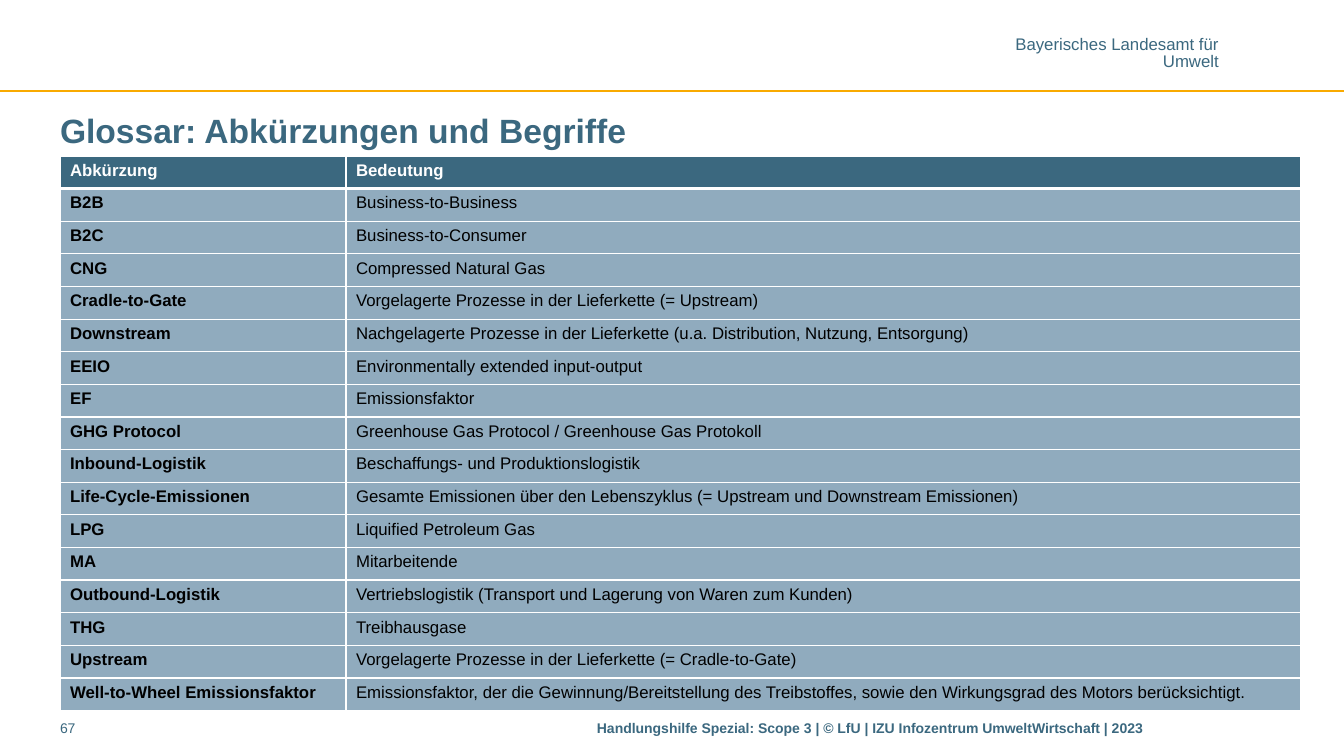
"""Build the glossary slide with its table of abbreviations."""
from lxml.etree import SubElement
from pptx import Presentation
from pptx.dml.color import RGBColor
from pptx.enum.shapes import MSO_CONNECTOR
from pptx.enum.text import MSO_ANCHOR, MSO_AUTO_SIZE, PP_ALIGN
from pptx.oxml.ns import qn
from pptx.util import Emu, Pt

TITLE = "Glossar: Abkürzungen und Begriffe"
AGENCY = ["Bayerisches Landesamt für", "Umwelt"]
FOOTER = "Handlungshilfe Spezial: Scope 3 | © LfU | IZU\u00a0Infozentrum UmweltWirtschaft | 2023"
PAGE = "67"
GLOSSARY = [
    ("Abkürzung", "Bedeutung"),
    ("B2B", "Business-to-Business"),
    ("B2C", "Business-to-Consumer"),
    ("CNG", "Compressed Natural Gas"),
    ("Cradle-to-Gate", "Vorgelagerte Prozesse in der Lieferkette (= Upstream)"),
    ("Downstream", "Nachgelagerte Prozesse in der Lieferkette (u.a. Distribution, Nutzung, Entsorgung)"),
    ("EEIO", "Environmentally extended input-output"),
    ("EF", "Emissionsfaktor"),
    ("GHG Protocol", "Greenhouse Gas Protocol / Greenhouse Gas Protokoll"),
    ("Inbound-Logistik", "Beschaffungs- und Produktionslogistik"),
    ("Life-Cycle-Emissionen", "Gesamte Emissionen über den Lebenszyklus (= Upstream und Downstream Emissionen)"),
    ("LPG", "Liquified Petroleum Gas"),
    ("MA", "Mitarbeitende"),
    ("Outbound-Logistik", "Vertriebslogistik (Transport und Lagerung von Waren zum Kunden)"),
    ("THG", "Treibhausgase"),
    ("Upstream", "Vorgelagerte Prozesse in der Lieferkette (= Cradle-to-Gate)"),
    ("Well-to-Wheel Emissionsfaktor", "Emissionsfaktor, der die Gewinnung/Bereitstellung des Treibstoffes, "
     "sowie den Wirkungsgrad des Motors berücksichtigt."),
]

PETROL = RGBColor(0x3B, 0x68, 0x7F)
MIST = RGBColor(0x90, 0xAB, 0xBE)
AMBER = RGBColor(0xF9, 0xAA, 0x00)
WHITE = RGBColor(0xFF, 0xFF, 0xFF)
BLACK = RGBColor(0x00, 0x00, 0x00)
FONT = "Arial"

WIDTH, HEIGHT = 1344, 756
LEFT, CONTENT_WIDTH = 60, 1241
RULE_Y = 91
TABLE_TOP, TABLE_HEIGHT = 156, 555
TERM_WIDTH = 286
FOOTER_TOP, FOOTER_HEIGHT = 714, 31
INSET = 5


def px(length):
    return Emu(round(length * 12192000 / WIDTH))


def add_run(paragraph, text, size, color, bold=False):
    run = paragraph.add_run()
    run.text = text
    run.font.name, run.font.size, run.font.bold = FONT, Pt(size), bold
    run.font.color.rgb = color


def set_insets(frame, vertical):
    frame.margin_left = frame.margin_right = 0
    frame.margin_top = frame.margin_bottom = px(vertical)


def add_label(slide, left, width, text, bold=False):
    frame = slide.shapes.add_textbox(px(left), px(FOOTER_TOP), px(width), px(FOOTER_HEIGHT)).text_frame
    frame.word_wrap = True
    set_insets(frame, INSET)
    add_run(frame.paragraphs[0], text, 10, PETROL, bold)


def add_header(slide):
    rule = slide.shapes.add_connector(MSO_CONNECTOR.STRAIGHT, 0, px(RULE_Y), px(WIDTH), px(RULE_Y))
    rule.line.color.rgb, rule.line.width = AMBER, Pt(2)
    SubElement(rule._element.spPr, qn("a:effectLst"))

    frame = slide.shapes.add_textbox(px(1015), px(37), px(204), px(34)).text_frame
    frame.word_wrap = False
    set_insets(frame, 0)
    for index, line in enumerate(AGENCY):
        paragraph = frame.add_paragraph() if index else frame.paragraphs[0]
        paragraph.alignment, paragraph.line_spacing = PP_ALIGN.RIGHT, 0.85
        add_run(paragraph, line, 12, PETROL)


def add_title(slide):
    title = slide.shapes.title
    title.left, title.top, title.width, title.height = px(LEFT), px(103), px(CONTENT_WIDTH), px(55)
    frame = title.text_frame
    frame.auto_size, frame.vertical_anchor = MSO_AUTO_SIZE.NONE, MSO_ANCHOR.MIDDLE
    set_insets(frame, INSET)
    frame.paragraphs[0].alignment = PP_ALIGN.LEFT
    add_run(frame.paragraphs[0], TITLE, 24, PETROL, True)


def set_borders(cell, top, bottom):
    for side, points in (("L", 1), ("R", 1), ("T", top), ("B", bottom)):
        border = SubElement(cell._tc.get_or_add_tcPr(), qn(f"a:ln{side}"), w=str(Pt(points)))
        SubElement(SubElement(border, qn("a:solidFill")), qn("a:srgbClr"), val=str(WHITE))


def add_glossary(slide):
    table = slide.shapes.add_table(len(GLOSSARY), 2, px(LEFT), px(TABLE_TOP),
                                   px(CONTENT_WIDTH), px(TABLE_HEIGHT)).table
    table.columns[0].width = px(TERM_WIDTH)
    table.columns[1].width = px(CONTENT_WIDTH - TERM_WIDTH)
    for row, entry in enumerate(GLOSSARY):
        table.rows[row].height = px(TABLE_HEIGHT / len(GLOSSARY))
        heading = row == 0
        for column, text in enumerate(entry):
            cell = table.cell(row, column)
            set_borders(cell, 3 if row == 1 else 1, 3 if heading else 1)
            cell.fill.solid()
            cell.fill.fore_color.rgb = PETROL if heading else MIST
            add_run(cell.text_frame.paragraphs[0], text, 12,
                    WHITE if heading else BLACK, heading or column == 0)


def main():
    deck = Presentation()
    deck.slide_width, deck.slide_height = px(WIDTH), px(HEIGHT)
    slide = deck.slides.add_slide(deck.slide_layouts[5])
    add_header(slide)
    add_title(slide)
    add_label(slide, 597, 704, FOOTER, True)
    add_label(slide, LEFT, 71, PAGE)
    add_glossary(slide)
    deck.save("out.pptx")


if __name__ == "__main__":
    main()
